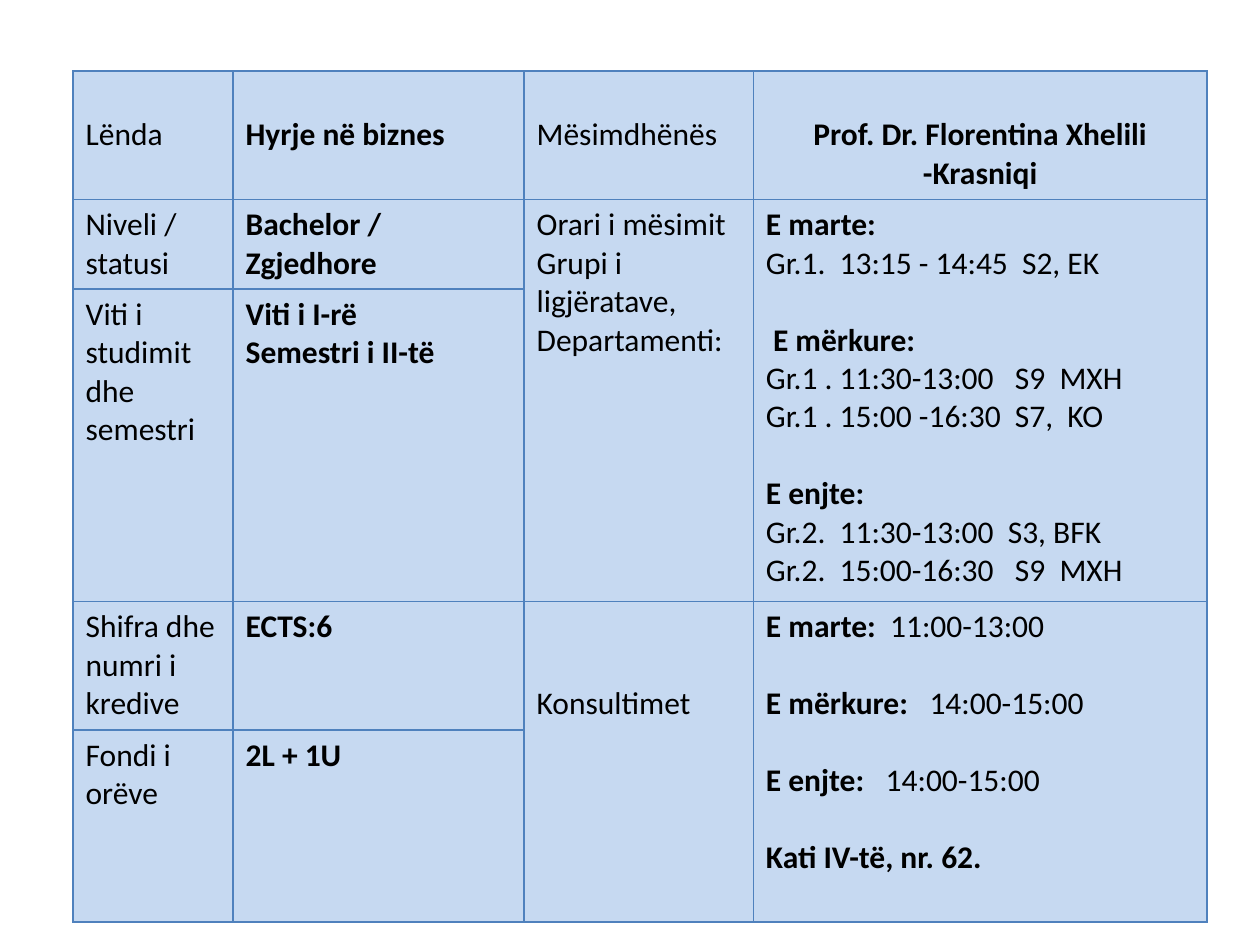
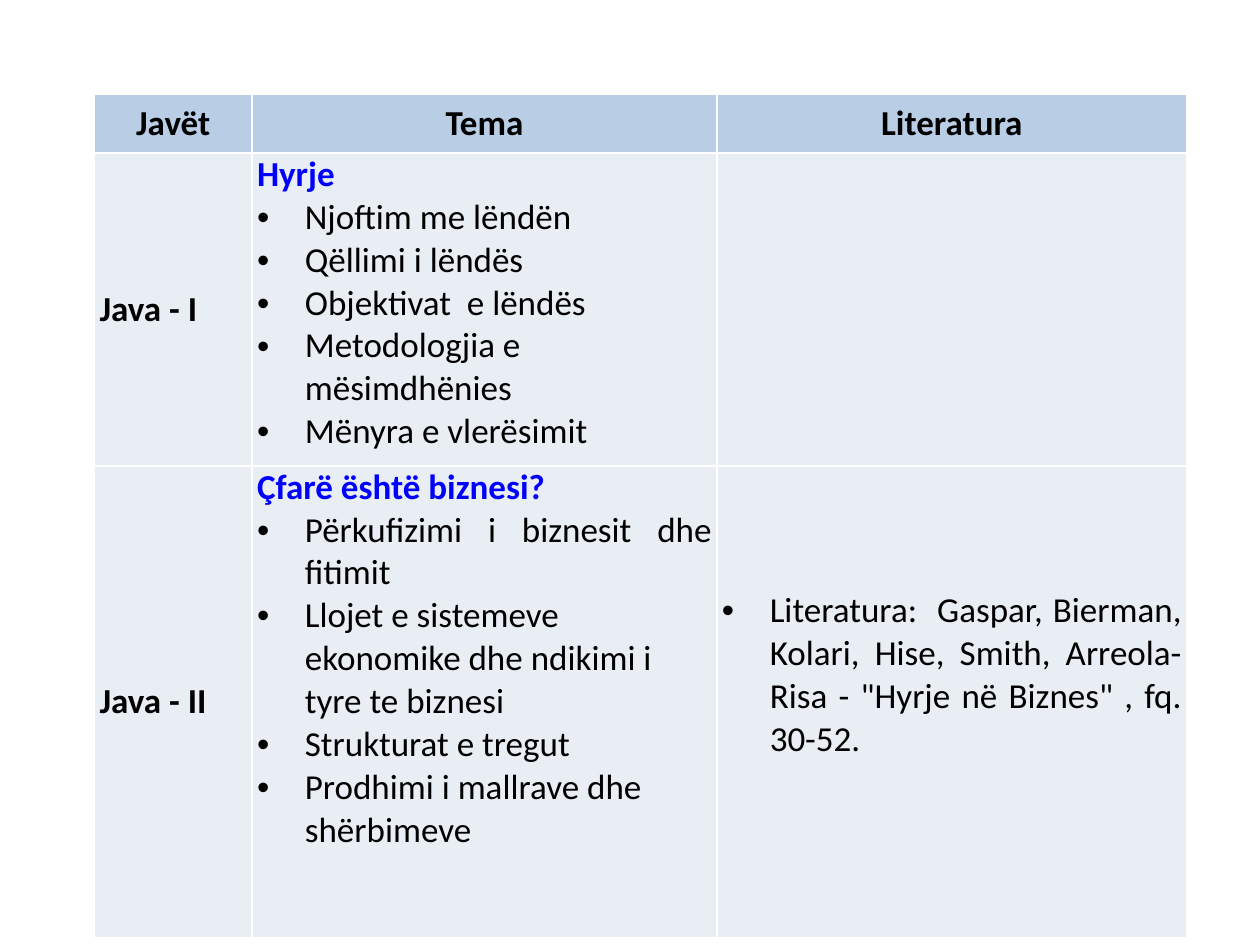
from dataclasses import dataclass

from lxml import etree
from pptx import Presentation
from pptx.dml.color import RGBColor
from pptx.enum.text import MSO_ANCHOR, PP_ALIGN
from pptx.oxml.ns import qn
from pptx.util import Inches, Pt

TOP, MIDDLE = MSO_ANCHOR.TOP, MSO_ANCHOR.MIDDLE
LEFT, CENTER, JUSTIFY = PP_ALIGN.LEFT, PP_ALIGN.CENTER, PP_ALIGN.JUSTIFY

SLIDE_W, SLIDE_H = Inches(10), Inches(7.5)
FONT = "Calibri"
COLORS = {
    "text": "000000",
    "topic": "0000FF",
    "course_fill": "C6D9F1",
    "course_border": "4F81BD",
    "header_fill": "B9CDE5",
    "week_fill": "E9EDF4",
    "week_border": "FFFFFF",
}
COURSE_SIZE, WEEK_SIZE = 18, 20
COURSE_LINE = 22  # height of one line of course text, in points
BULLET_INDENT = Inches(0.38)
COURSE_MARGINS = {"margin_left": Inches(0.1), "margin_right": Inches(0.1),
                  "margin_top": Inches(0.05), "margin_bottom": Inches(0.05)}
WEEK_MARGINS = {"margin_left": Inches(0.04), "margin_right": Inches(0.04),
                "margin_top": 0, "margin_bottom": 0}


@dataclass
class Line:
    """One paragraph: bold lead text followed by plain text."""
    bold: str = ""
    plain: str = ""
    color: str = "text"
    align: PP_ALIGN = LEFT
    bullet: bool = False
    gap: float = 0


def add_table(slide, left, top, col_shares, row_shares):
    """Place a table; all lengths are percentages of the slide's size."""
    widths = [int(SLIDE_W * share / 100) for share in col_shares]
    heights = [int(SLIDE_H * share / 100) for share in row_shares]
    table = slide.shapes.add_table(
        len(heights), len(widths), int(SLIDE_W * left / 100),
        int(SLIDE_H * top / 100), sum(widths), sum(heights)).table
    table.first_row = table.horz_banding = False
    for column, width in zip(table.columns, widths):
        column.width = width
    for row, height in zip(table.rows, heights):
        row.height = height
    return table


def style_cell(cell, fill, border, margins):
    cell.fill.solid()
    cell.fill.fore_color.rgb = RGBColor.from_string(COLORS[fill])
    for name, value in margins.items():
        setattr(cell, name, value)
    props = cell._tc.get_or_add_tcPr()
    for index, side in enumerate(("lnL", "lnR", "lnT", "lnB")):
        edge = etree.Element(qn(f"a:{side}"), w=str(Pt(1)))
        solid = etree.SubElement(edge, qn("a:solidFill"))
        etree.SubElement(solid, qn("a:srgbClr"), val=COLORS[border])
        props.insert(index, edge)


def add_bullet(paragraph):
    props = paragraph._p.get_or_add_pPr()
    props.set("marL", str(BULLET_INDENT))
    props.set("indent", str(-BULLET_INDENT))
    etree.SubElement(props, qn("a:buFont"), typeface="Arial")
    etree.SubElement(props, qn("a:buChar"), char="•")


def write_cell(cell, lines, size, anchor=TOP):
    cell.vertical_anchor = anchor
    frame = cell.text_frame
    for index, line in enumerate(lines):
        paragraph = frame.add_paragraph() if index else frame.paragraphs[0]
        paragraph.alignment = line.align
        if line.gap:
            paragraph.space_before = Pt(line.gap)
        if line.bullet:
            add_bullet(paragraph)
        for text, bold in ((line.bold, True), (line.plain, False)):
            if text:
                run = paragraph.add_run()
                run.text = text
                font_format = {"name": FONT, "size": Pt(size), "bold": bold}
                for name, value in font_format.items():
                    setattr(run.font, name, value)
                run.font.color.rgb = RGBColor.from_string(COLORS[line.color])


def bullets(*texts):
    return [Line(plain=text, bullet=True) for text in texts]


def build_course_slide(slide):
    table = add_table(slide, 5.8, 7.5, (12.7, 23.1, 18.2, 36),
                      (13.6, 9.4, 33.1, 13.6, 20.3))
    for cell in table.iter_cells():
        style_cell(cell, "course_fill", "course_border", COURSE_MARGINS)
    for first_row in (1, 3):
        for column in (2, 3):
            table.cell(first_row, column).merge(
                table.cell(first_row + 1, column))

    facts = [
        ("Lënda", ["Hyrje në biznes"]),
        ("Niveli / statusi", ["Bachelor / Zgjedhore"]),
        ("Viti i studimit dhe semestri", ["Viti i I-rë", "Semestri i II-të"]),
        ("Shifra dhe numri i kredive", ["ECTS:6"]),
        ("Fondi i orëve", ["2L + 1U"]),
    ]
    for row, (label, values) in enumerate(facts):
        write_cell(table.cell(row, 0), [Line(plain=label)], COURSE_SIZE)
        write_cell(table.cell(row, 1), [Line(value) for value in values],
                   COURSE_SIZE)

    schedule = [
        Line("E marte:"),
        Line(plain="Gr.1.  13:15 - 14:45  S2, EK"),
        Line(" E mërkure:", gap=COURSE_LINE),
        Line(plain="Gr.1 . 11:30-13:00   S9  MXH"),
        Line(plain="Gr.1 . 15:00 -16:30  S7,  KO"),
        Line("E enjte:", gap=COURSE_LINE),
        Line(plain="Gr.2.  11:30-13:00  S3, BFK"),
        Line(plain="Gr.2.  15:00-16:30   S9  MXH"),
    ]
    office_hours = [
        Line("E marte:  ", "11:00-13:00"),
        Line("E mërkure:   ", "14:00-15:00", gap=COURSE_LINE),
        Line("E enjte:   ", "14:00-15:00", gap=COURSE_LINE),
        Line("Kati IV-të, nr. 62.", gap=COURSE_LINE),
    ]
    teaching = {
        0: ([Line(plain="Mësimdhënës")],
            [Line("Prof. Dr. Florentina Xhelili -Krasniqi", align=CENTER)]),
        1: ([Line(plain="Orari i mësimit Grupi i ligjëratave,"),
             Line(plain="Departamenti:")], schedule),
        3: ([Line(plain="Konsultimet")], office_hours),
    }
    for row, (label, details) in teaching.items():
        write_cell(table.cell(row, 2), label, COURSE_SIZE)
        write_cell(table.cell(row, 3), details, COURSE_SIZE)

    lowered = [(0, column, 1) for column in range(4)] + [(3, 2, 2)]
    for row, column, line_count in lowered:
        table.cell(row, column).margin_top += Pt(COURSE_LINE * line_count)


def build_weeks_slide(slide):
    table = add_table(slide, 7.5, 10, (12.5, 36.9, 37.3), (6.2, 33.1, 49.9))
    for index, cell in enumerate(table.iter_cells()):
        fill = "header_fill" if index < len(table.columns) else "week_fill"
        style_cell(cell, fill, "week_border", WEEK_MARGINS)

    for column, heading in enumerate(("Javët", "Tema", "Literatura")):
        write_cell(table.cell(0, column), [Line(heading, align=CENTER)],
                   WEEK_SIZE, MIDDLE)

    business_topics = bullets(
        "Përkufizimi i biznesit dhe fitimit",
        "Llojet e sistemeve ekonomike dhe ndikimi i tyre te biznesi",
        "Strukturat e tregut",
        "Prodhimi i mallrave dhe shërbimeve")
    business_topics[0].align = JUSTIFY
    weeks = [
        ("Java - I", "Hyrje", bullets(
            "Njoftim me lëndën", "Qëllimi i lëndës", "Objektivat  e lëndës",
            "Metodologjia e mësimdhënies", "Mënyra e vlerësimit")),
        ("Java - II", "Çfarë është biznesi?", business_topics),
    ]
    for row, (week, topic, points) in enumerate(weeks, start=1):
        write_cell(table.cell(row, 0), [Line(week)], WEEK_SIZE, MIDDLE)
        write_cell(table.cell(row, 1), [Line(topic, color="topic")] + points,
                   WEEK_SIZE)

    reading = bullets("Literatura:  Gaspar, Bierman, Kolari, Hise, Smith, "
                      'Arreola-Risa - "Hyrje në Biznes" , fq. 30-52.')
    reading[0].align = JUSTIFY
    reading_cell = table.cell(2, 2)
    write_cell(reading_cell, reading, WEEK_SIZE, MIDDLE)
    reading_cell.margin_bottom = Inches(0.42)


def main():
    deck = Presentation()
    deck.slide_width, deck.slide_height = SLIDE_W, SLIDE_H
    blank = deck.slide_layouts[6]
    for build in (build_course_slide, build_weeks_slide):
        build(deck.slides.add_slide(blank))
    deck.save("out.pptx")


if __name__ == "__main__":
    main()
